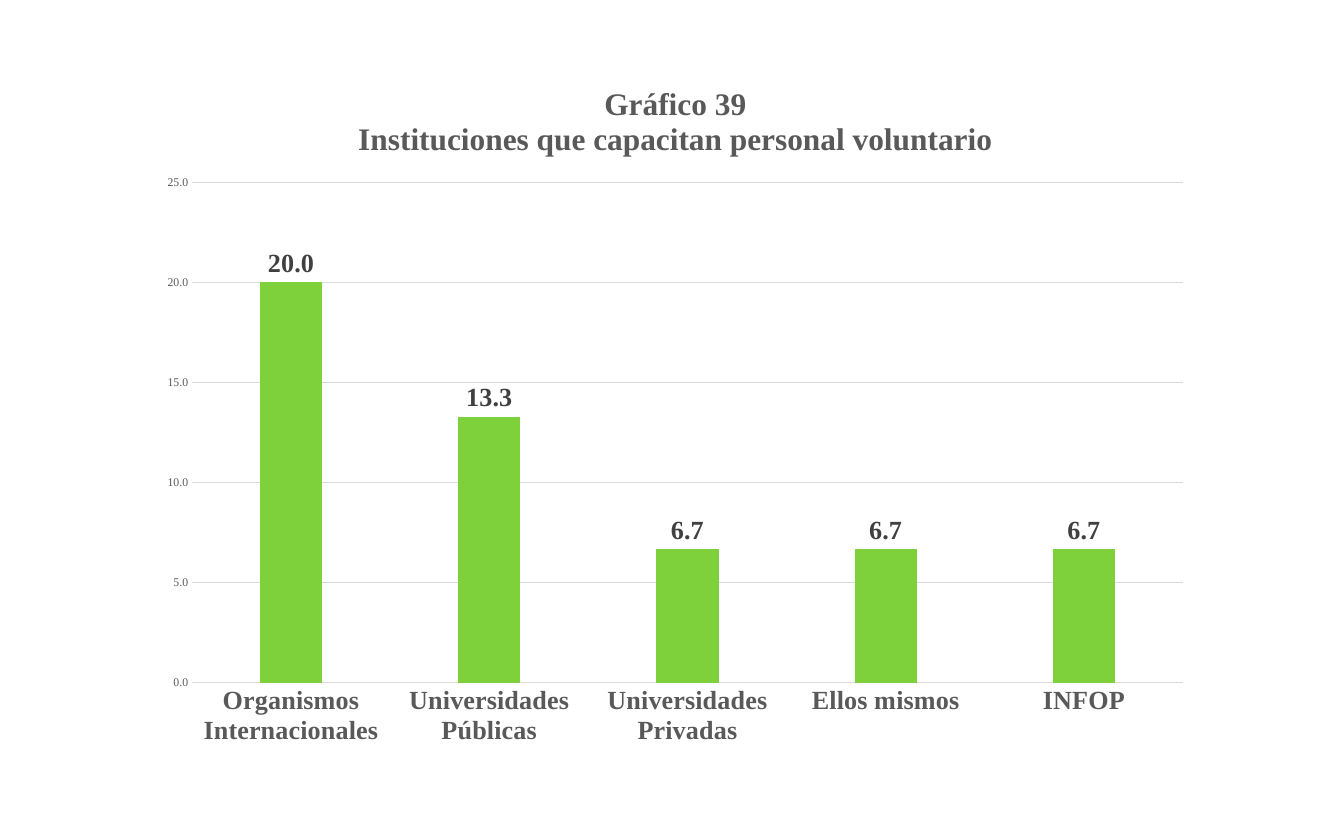
from dataclasses import dataclass

from lxml.etree import SubElement
from pptx import Presentation
from pptx.chart.data import CategoryChartData
from pptx.dml.color import RGBColor
from pptx.enum.chart import XL_CHART_TYPE as ChartType
from pptx.enum.chart import XL_LABEL_POSITION as LabelPosition
from pptx.enum.chart import XL_TICK_MARK as TickMark
from pptx.oxml.ns import qn
from pptx.util import Inches, Pt


@dataclass(frozen=True)
class Theme:
    """Colours, font and type sizes of the slide."""
    font: str = "Times New Roman"
    bar: str = "7FD13B"
    text: str = "595959"
    value: str = "404040"
    rule: str = "D9D9D9"
    title_size: int = 24
    label_size: int = 20
    scale_size: int = 9
    rule_width: float = 0.75


THEME = Theme()
NUMBER_FORMAT = "0.0"
TITLE = "Gráfico 39\nInstituciones que capacitan personal voluntario"
TRAINERS = {
    "Organismos Internacionales": 20,
    "Universidades Públicas": 13.3,
    "Universidades Privadas": 6.7,
    "Ellos mismos": 6.7,
    "INFOP": 6.7,
}


def style_font(font, size, color=THEME.text, bold=False):
    """Apply the theme font with a size, colour and weight."""
    font.name = THEME.font
    font.size = Pt(size)
    font.bold = bold
    font.color.rgb = RGBColor.from_string(color)


def write_text(frame, text, **font_format):
    """Write each line of text as a formatted paragraph."""
    for index, line in enumerate(text.split("\n")):
        paragraph = frame.add_paragraph() if index else frame.paragraphs[0]
        run = paragraph.add_run()
        run.text = line
        style_font(run.font, **font_format)


def style_rule(line):
    """Draw an axis or grid line in the theme's thin grey."""
    line.color.rgb = RGBColor.from_string(THEME.rule)
    line.width = Pt(THEME.rule_width)


def place_plot(chart, box, margins):
    """Fix the inner plot area by its margins inside the chart box."""
    width, height = box[2:]
    left, top, right, bottom = margins
    plot_area = chart._chartSpace.chart.plotArea
    for old_layout in plot_area.findall(qn("c:layout")):
        plot_area.remove(old_layout)
    layout = SubElement(plot_area, qn("c:layout"))
    plot_area.insert(0, layout)
    manual = SubElement(layout, qn("c:manualLayout"))
    settings = {
        "layoutTarget": "inner",
        "xMode": "edge",
        "yMode": "edge",
        "x": left / width,
        "y": top / height,
        "w": (width - left - right) / width,
        "h": (height - top - bottom) / height,
    }
    for tag, value in settings.items():
        SubElement(manual, qn(f"c:{tag}")).set("val", str(value))


def style_axes(chart):
    """Format the institution axis and the value scale."""
    institutions, scale = chart.category_axis, chart.value_axis
    for axis in (institutions, scale):
        axis.major_tick_mark = axis.minor_tick_mark = TickMark.NONE
    style_font(institutions.tick_labels.font, THEME.label_size, bold=True)
    style_rule(institutions.format.line)
    style_font(scale.tick_labels.font, THEME.scale_size)
    scale.tick_labels.number_format = NUMBER_FORMAT
    scale.tick_labels.number_format_is_linked = False
    scale.minimum_scale, scale.maximum_scale, scale.major_unit = 0, 25, 5
    scale.format.line.fill.background()
    scale.has_major_gridlines = True
    style_rule(scale.major_gridlines.format.line)


def style_bars(plot):
    """Format the bars and the values above them."""
    plot.gap_width, plot.overlap = 219, -27
    plot.vary_by_categories = False
    bars = plot.series[0]
    bars.format.fill.solid()
    bars.format.fill.fore_color.rgb = RGBColor.from_string(THEME.bar)
    values = bars.data_labels
    values.show_value = True
    values.position = LabelPosition.OUTSIDE_END
    values.number_format = NUMBER_FORMAT
    values.number_format_is_linked = False
    style_font(values.font, THEME.label_size, THEME.value, bold=True)


def add_trainers_chart(slide, box):
    """Add the column chart of training institutions in the box."""
    trainers = CategoryChartData(number_format=NUMBER_FORMAT)
    trainers.categories = list(TRAINERS)
    trainers.add_series("Series 1", list(TRAINERS.values()))
    chart = slide.shapes.add_chart(
        ChartType.COLUMN_CLUSTERED, *box, trainers).chart
    style_font(chart.font, THEME.scale_size)
    chart.has_legend = False
    chart.has_title = True
    write_text(chart.chart_title.text_frame, TITLE,
               size=THEME.title_size, bold=True)
    chart.chart_title.include_in_layout = False
    style_axes(chart)
    style_bars(chart.plots[0])
    margins = [Inches(side) for side in (0.49, 1.27, 0.23, 0.81)]
    place_plot(chart, box, margins)


def main():
    """Build the slide and save it."""
    deck = Presentation()
    deck.slide_width, deck.slide_height = Inches(14.29), Inches(8.9)
    slide = deck.slides.add_slide(deck.slide_layouts[6])
    add_trainers_chart(
        slide, [Inches(side) for side in (1.55, 0.67, 11.26, 7.4)])
    deck.save("out.pptx")


if __name__ == "__main__":
    main()
